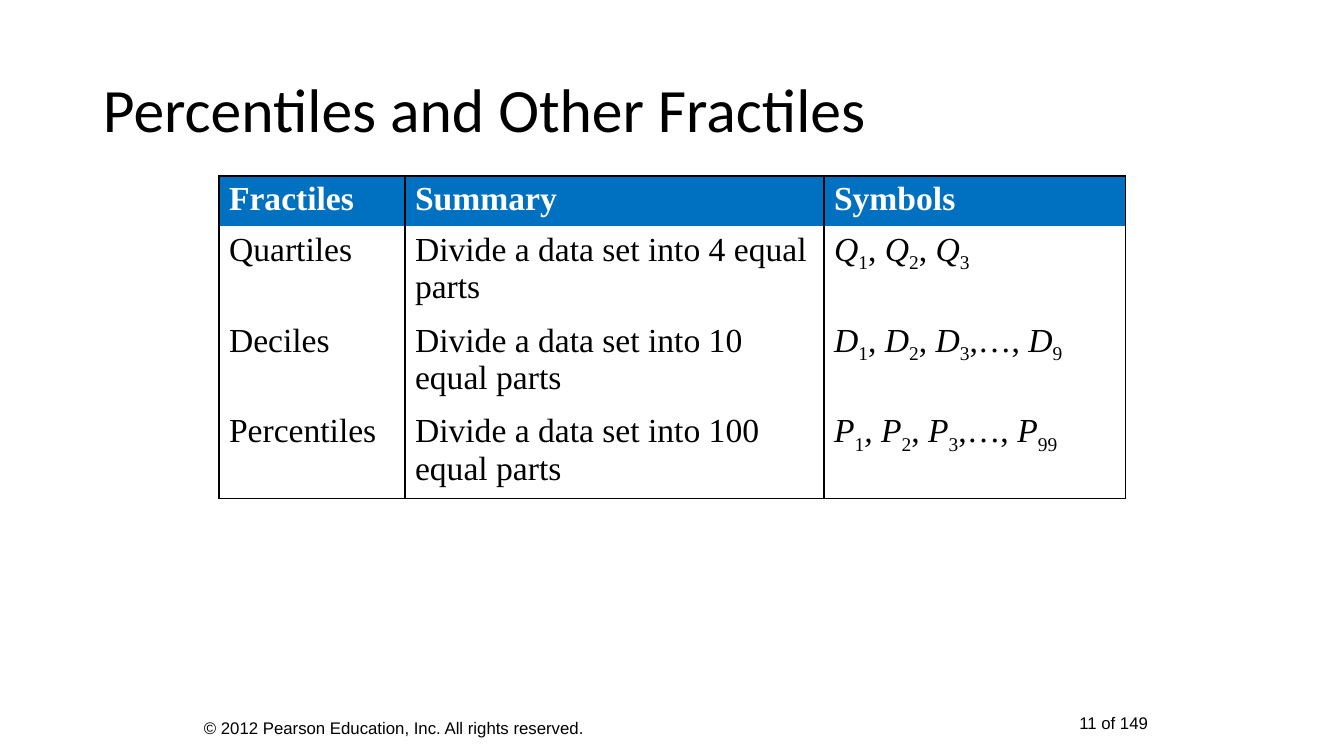
"""Build the slide that summarises quartiles, deciles and percentiles."""
import itertools

import pptx
import pptx.dml.color
import pptx.enum.text
import pptx.oxml.ns
import pptx.util
from lxml import etree

TITLE = "Percentiles and Other Fractiles"
COPYRIGHT = "© 2012 Pearson Education, Inc. All rights reserved."
PAGE = "11 of 149"
HEADINGS = ("Fractiles", "Summary", "Symbols")
FRACTILES = [
    ("Quartiles", "Divide a data set into 4 equal parts",
     [("Q", "1", ", "), ("Q", "2", ", "), ("Q", "3", "")]),
    ("Deciles", "Divide a data set into 10 equal parts",
     [("D", "1", ", "), ("D", "2", ", "), ("D", "3", ",…, "), ("D", "9", "")]),
    ("Percentiles", "Divide a data set into 100 equal parts",
     [("P", "1", ""), (", P", "2", ", "), ("P", "3", ",…, "), ("P", "99", "")]),
]

THEME = {
    "ink": "000000", "header_text": "FFFFFF", "header_fill": "0070C0",
    "title_font": "Calibri", "table_font": "Times New Roman", "footer_font": "Arial",
    "title_size": 44, "table_size": 24, "footer_size": 12, "border_width": 1,
}

SLIDE_SIZE = (1344, 756)
TITLE_BOX = (93, 40, 1159, 146)
PAGE_BOX = (923, 708, 235, 40)
COPYRIGHT_BOX = (194, 708, 479, 40)
TABLE_CORNER = (219, 176)
COLUMN_WIDTHS = (186, 419, 302)
HEADER_HEIGHT, ROW_HEIGHT = 47, 84

ANCHOR = pptx.enum.text.MSO_ANCHOR
ALIGN = pptx.enum.text.PP_ALIGN


def px(length):
    """Turn pixels into EMU."""
    return pptx.util.Emu(round(length * 914400 / 100.8))


def colour(code):
    """Turn a hex code into a colour."""
    return pptx.dml.color.RGBColor.from_string(code)


def write(frame, content, *, font, size, ink=THEME["ink"], bold=False,
          align=ALIGN.LEFT, spacing=None):
    """Write a string, or (letter, index, separator) symbols, into a frame."""
    frame.word_wrap = True
    paragraph = frame.paragraphs[0]
    paragraph.alignment = align
    if spacing:
        paragraph.line_spacing = spacing
    if isinstance(content, str):
        pieces = [(content, "plain")]
    else:
        roles = ("italic", "subscript", "plain")
        pieces = itertools.chain.from_iterable(zip(symbol, roles) for symbol in content)
    for words, role in pieces:
        if not words:
            continue
        run = paragraph.add_run()
        run.text = words
        run.font.name, run.font.size = font, pptx.util.Pt(size)
        run.font.bold, run.font.italic = bold, role == "italic"
        run.font.color.rgb = colour(ink)
        if role == "subscript":
            run.font._element.set("baseline", "-25000")


def add_text(slide, box, content, anchor=ANCHOR.MIDDLE, **style):
    """Add a text box."""
    frame = slide.shapes.add_textbox(*map(px, box)).text_frame
    frame.vertical_anchor = anchor
    write(frame, content, **style)


def set_borders(cell, visible):
    """Draw the visible sides of a cell and clear the others."""
    properties = cell._tc.get_or_add_tcPr()
    qn = pptx.oxml.ns.qn
    for position, side in enumerate("LRTB"):
        line = etree.Element(qn(f"a:ln{side}"))
        if side in visible:
            line.set("w", str(pptx.util.Pt(THEME["border_width"])))
            fill = etree.SubElement(line, qn("a:solidFill"))
            etree.SubElement(fill, qn("a:srgbClr")).set("val", THEME["ink"])
        else:
            etree.SubElement(line, qn("a:noFill"))
        properties.insert(position, line)


def add_fractile_table(slide):
    """Add the table with its header row and outer borders."""
    rows = [HEADINGS, *FRACTILES]
    heights = [HEADER_HEIGHT] + [ROW_HEIGHT] * len(FRACTILES)
    table = slide.shapes.add_table(
        len(rows), len(HEADINGS), *map(px, TABLE_CORNER),
        px(sum(COLUMN_WIDTHS)), px(sum(heights))).table
    table.horz_banding = False
    for column, width in zip(table.columns, COLUMN_WIDTHS):
        column.width = px(width)
    for number, (row, height) in enumerate(zip(rows, heights)):
        table.rows[number].height = px(height)
        header = number == 0
        sides = "LR" + "T" * header + "B" * (number == len(FRACTILES))
        for column, content in enumerate(row):
            cell = table.cell(number, column)
            if header:
                cell.fill.solid()
                cell.fill.fore_color.rgb = colour(THEME["header_fill"])
            else:
                cell.fill.background()
            set_borders(cell, sides)
            write(cell.text_frame, content, font=THEME["table_font"],
                  size=THEME["table_size"], bold=header,
                  ink=THEME["header_text"] if header else THEME["ink"])


def main():
    """Build and save the slide."""
    deck = pptx.Presentation()
    deck.slide_width, deck.slide_height = map(px, SLIDE_SIZE)
    slide = deck.slides.add_slide(deck.slide_layouts[6])
    footer = {"font": THEME["footer_font"], "size": THEME["footer_size"]}
    add_text(slide, TITLE_BOX, TITLE, font=THEME["title_font"],
             size=THEME["title_size"], spacing=0.9)
    add_fractile_table(slide)
    add_text(slide, PAGE_BOX, PAGE, anchor=ANCHOR.TOP, align=ALIGN.RIGHT, **footer)
    add_text(slide, COPYRIGHT_BOX, COPYRIGHT, **footer)
    deck.save("out.pptx")


if __name__ == "__main__":
    main()
